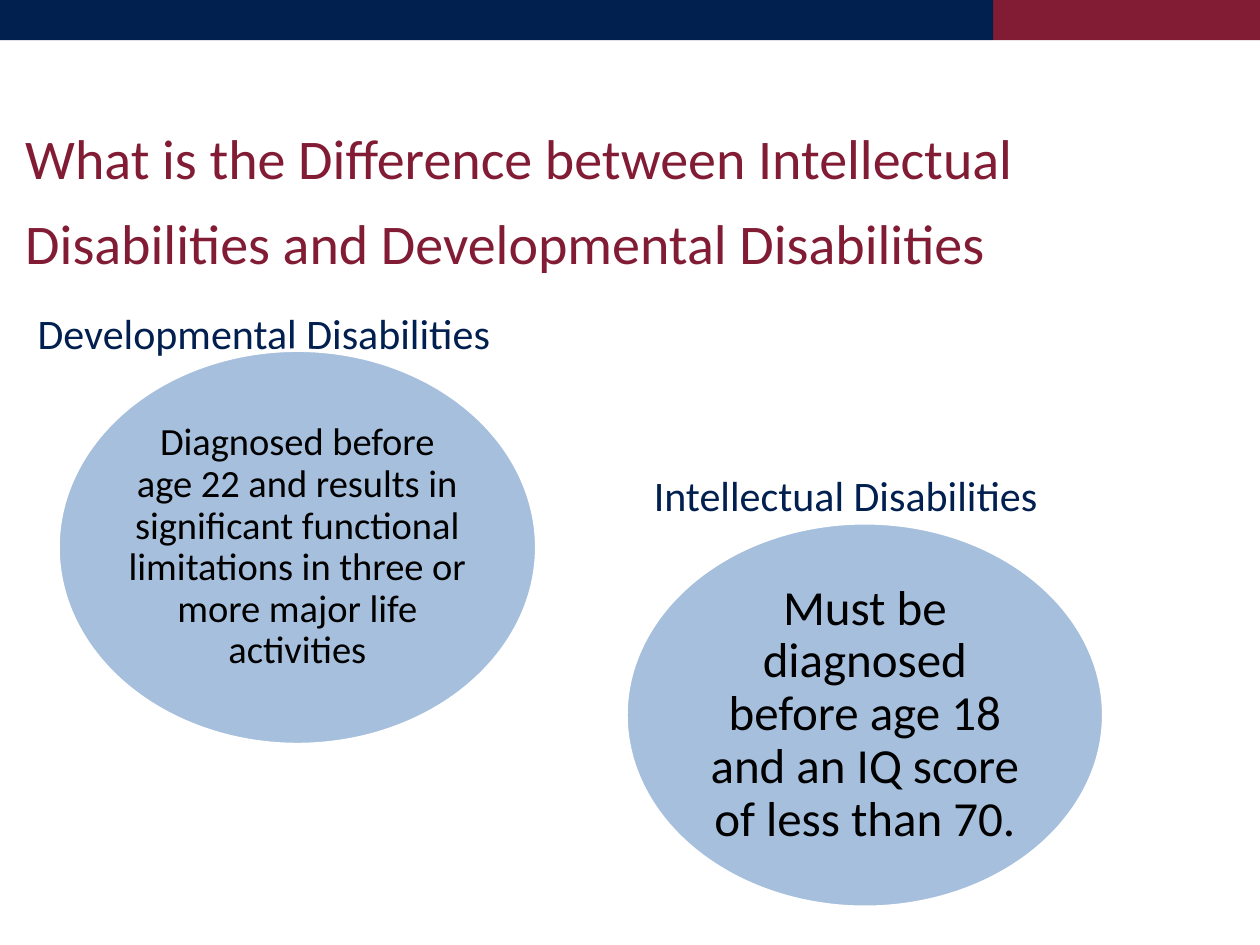
from lxml import etree
from pptx import Presentation
from pptx.dml.color import RGBColor
from pptx.enum.shapes import MSO_SHAPE
from pptx.enum.text import MSO_ANCHOR, PP_ALIGN
from pptx.oxml.ns import qn
from pptx.util import Cm, Pt

RECT, OVAL = MSO_SHAPE.RECTANGLE, MSO_SHAPE.OVAL
TOP, MIDDLE, BOTTOM = MSO_ANCHOR.TOP, MSO_ANCHOR.MIDDLE, MSO_ANCHOR.BOTTOM
LEFT, CENTER = PP_ALIGN.LEFT, PP_ALIGN.CENTER

NAVY = RGBColor(0x01, 0x1F, 0x4F)
MAROON = RGBColor(0x82, 0x1C, 0x35)
BLUE = RGBColor(0x4F, 0x81, 0xBD)
WHITE = RGBColor(0xFF, 0xFF, 0xFF)
BLACK = RGBColor(0, 0, 0)

WIDTH, HEIGHT = 25.4, 19.05
BAR_HEIGHT, BAR_SPLIT = 0.81, 20.02
INSET = (0.25, 0.13)

TITLE = "What is the Difference between Intellectual Disabilities and Developmental Disabilities"
TITLE_BOX = (0.51, 2.11, 21.69, 3.18)

TOPICS = [
    {"label": "Intellectual Disabilities",
     "label_box": (12.93, 8.84, 9.96, 1.78),
     "text": "Must be diagnosed before age 18 and an IQ score of less than 70.",
     "oval": (12.62, 10.54, 9.63, 7.75), "size": 28},
    {"label": "Developmental Disabilities",
     "label_box": (0.51, 5.56, 10.97, 1.78),
     "text": "Diagnosed before age 22 and results in significant functional "
             "limitations in three or more major life activities",
     "oval": (1.17, 7.06, 9.65, 7.95), "size": 22},
]


def write(sp, text, size, color, align=LEFT, anchor=TOP, inset=(0, 0), spacing=None):
    tf = sp.text_frame
    tf.word_wrap = True
    tf.vertical_anchor = anchor
    tf.margin_left = tf.margin_right = Cm(inset[0])
    tf.margin_top = tf.margin_bottom = Cm(inset[1])
    p = tf.paragraphs[0]
    p.alignment = align
    p.line_spacing = spacing
    r = p.add_run()
    r.text = text
    r.font.name = "Calibri"
    r.font.size = Pt(size)
    r.font.color.rgb = color


def add_text(slide, box, text, **fmt):
    write(slide.shapes.add_textbox(*map(Cm, box)), text, **fmt)


def add_filled(slide, kind, box, color):
    sp = slide.shapes.add_shape(kind, *map(Cm, box))
    sp.shadow.inherit = False
    sp.fill.solid()
    sp.fill.fore_color.rgb = color
    sp.line.fill.background()
    return sp


def add_oval(slide, box, text, size):
    sp = add_filled(slide, OVAL, box, BLUE)
    clr = sp.fill._xPr.find(qn("a:solidFill"))[0]
    etree.SubElement(clr, qn("a:alpha"), val="50000")
    sp.line.color.rgb = WHITE
    sp.line.width = Pt(2)
    write(sp, text, size, BLACK, align=CENTER, anchor=MIDDLE, spacing=0.9)


def main():
    prs = Presentation()
    prs.slide_width, prs.slide_height = Cm(WIDTH), Cm(HEIGHT)
    s = prs.slides.add_slide(prs.slide_layouts[6])

    add_filled(s, RECT, (BAR_SPLIT, 0, WIDTH - BAR_SPLIT, BAR_HEIGHT), MAROON)
    add_filled(s, RECT, (0, 0, BAR_SPLIT, BAR_HEIGHT), NAVY)

    for topic in TOPICS:
        add_text(s, topic["label_box"], topic["label"], size=24, color=NAVY,
                 anchor=BOTTOM, inset=INSET)
        add_oval(s, topic["oval"], topic["text"], topic["size"])

    add_text(s, TITLE_BOX, TITLE, size=32, color=MAROON, spacing=Pt(49))
    prs.save("out.pptx")


if __name__ == "__main__":
    main()
